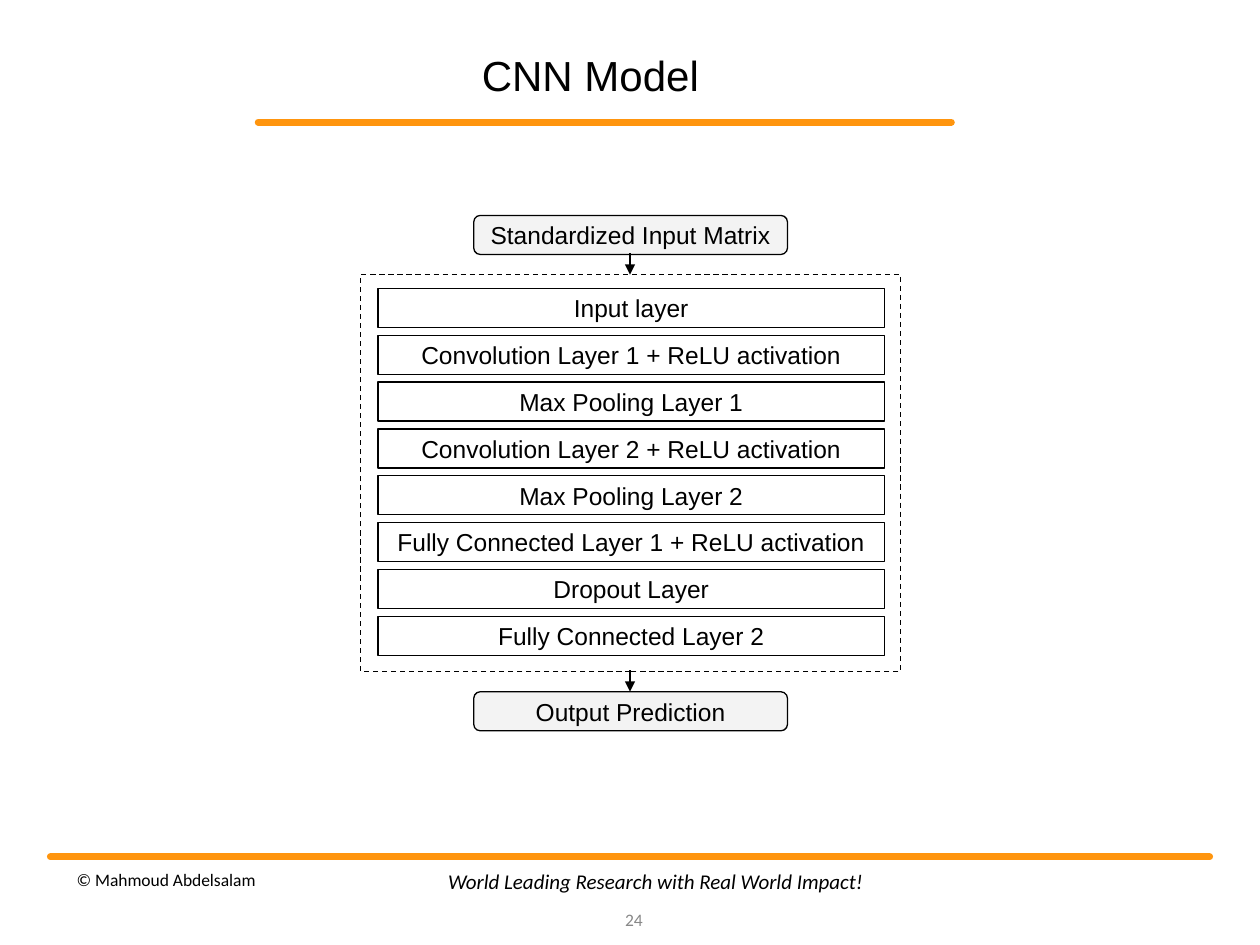
from lxml import etree
from pptx import Presentation
from pptx import util as u
from pptx.dml.color import RGBColor
from pptx.enum import dml, shapes, text
from pptx.oxml import ns

LAYERS = [
    "Input layer",
    "Convolution Layer 1 + ReLU activation",
    "Max Pooling Layer 1",
    "Convolution Layer 2 + ReLU activation",
    "Max Pooling Layer 2",
    "Fully Connected Layer 1 + ReLU activation",
    "Dropout Layer",
    "Fully Connected Layer 2",
]


def color(value):
    return RGBColor.from_string(value)


class Painter:
    """Draws styled elements on the current page."""

    black, orange, gray = "000000", "FF950E", "F3F3F3"
    thin, thick = 0.75, 4
    row_height = 0.31

    def __init__(self, page):
        self.page = page

    def fill_text(self, box, words, size, font="Arial", ink=black, align="CENTER",
                  anchor="MIDDLE", italic=False, inset=0.05):
        frame = box.text_frame
        frame.word_wrap = True
        frame.auto_size = text.MSO_AUTO_SIZE.NONE
        frame.vertical_anchor = text.MSO_ANCHOR[anchor]
        frame.margin_left = frame.margin_right = u.Inches(0.1)
        frame.margin_top = frame.margin_bottom = u.Inches(inset)
        frame.text = words
        para = frame.paragraphs[0]
        para.alignment = text.PP_ALIGN[align]
        para.font.name = font
        para.font.size = u.Pt(size)
        para.font.italic = italic
        para.font.color.rgb = color(ink)
        return para

    def title(self, words, left, top, width, height):
        box = self.page.shapes.title
        box.left, box.top = u.Inches(left), u.Inches(top)
        box.width, box.height = u.Inches(width), u.Inches(height)
        self.fill_text(box, words, 24, anchor="BOTTOM").line_spacing = 0.9

    def label(self, words, left, top, width, height, size, **style):
        box = self.page.shapes.add_textbox(*map(u.Inches, (left, top, width, height)))
        self.fill_text(box, words, size, font="Calibri", **style)

    def block(self, left, top, width, height=row_height, words="", fill=None,
              kind="RECTANGLE", dashed=False):
        box = self.page.shapes.add_shape(
            shapes.MSO_SHAPE[kind], *map(u.Inches, (left, top, width, height)))
        box.shadow.inherit = False
        box.line.color.rgb = color(self.black)
        box.line.width = u.Pt(self.thin)
        if dashed:
            box.line.dash_style = dml.MSO_LINE.DASH
        if fill:
            box.fill.solid()
            box.fill.fore_color.rgb = color(fill)
        else:
            box.fill.background()
        if words:
            self.fill_text(box, words, 14, inset=0.1)

    def line(self, start, end, ink, width):
        link = self.page.shapes.add_connector(
            shapes.MSO_CONNECTOR.STRAIGHT, *map(u.Inches, start + end))
        link.line.color.rgb = color(ink)
        link.line.width = u.Pt(width)
        properties = link._element.spPr
        etree.SubElement(properties, ns.qn("a:effectLst"))
        return properties.find(ns.qn("a:ln"))

    def rule(self, left, right, y):
        self.line((left, y), (right, y), self.orange, self.thick).set("cap", "rnd")

    def arrow(self, x, top, bottom):
        outline = self.line((x, top), (x, bottom), self.black, self.thin)
        etree.SubElement(outline, ns.qn("a:tailEnd"), type="triangle")


def main():
    deck = Presentation()
    deck.slide_width, deck.slide_height = u.Inches(10), u.Inches(7.5)
    painter = Painter(deck.slides.add_slide(deck.slide_layouts[5]))

    painter.rule(2.05, 7.55, 0.97)
    painter.rule(0.4, 9.6, 6.8)
    painter.title("CNN Model", 1.99, 0.34, 5.39, 0.51)
    painter.label("© Mahmoud Abdelsalam", 0.51, 6.8, 2.75, 0.36, 10, align="LEFT")
    painter.label("World Leading Research with Real World Impact!",
                  3.02, 6.79, 4.37, 0.4, 12, italic=True)

    painter.block(2.86, 2.18, 4.29, 3.15, dashed=True)
    pitch = (4.89 - 2.29) / (len(LAYERS) - 1)
    for index, layer in enumerate(LAYERS):
        painter.block(3, 2.29 + index * pitch, 4.02, words=layer, fill="FFFFFF")
    for words, top, arrow_top in (("Standardized Input Matrix", 1.71, 2.01),
                                  ("Output Prediction", 5.49, 5.32)):
        painter.block(3.76, top, 2.49, words=words, fill=painter.gray,
                      kind="ROUNDED_RECTANGLE")
        painter.arrow(5, arrow_top, arrow_top + 0.17)

    painter.label("24", 4.8, 7.1, 0.4, 0.4, 10, ink="888888", align="RIGHT")
    deck.save("out.pptx")


if __name__ == "__main__":
    main()
